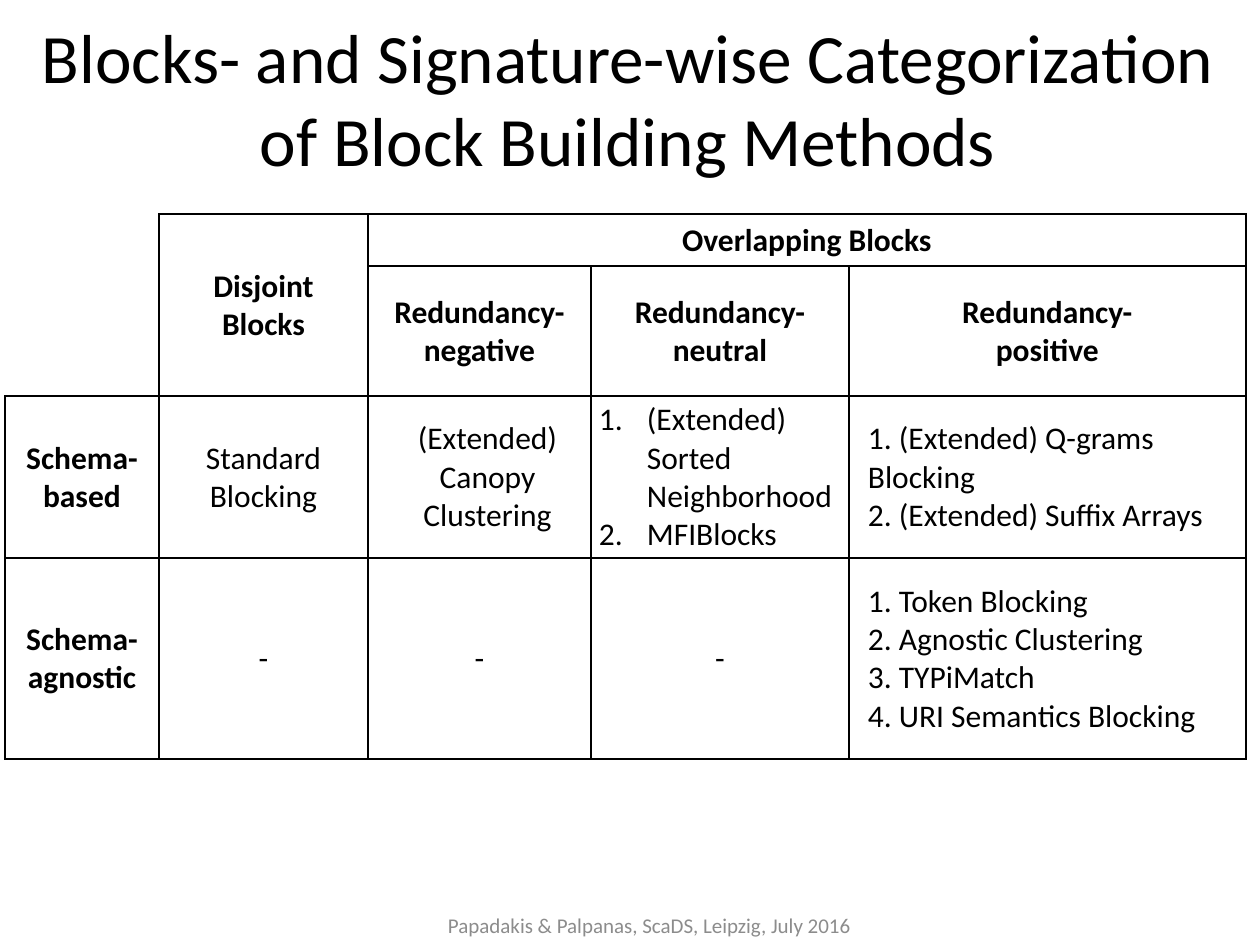
from lxml import etree
from pptx import Presentation
from pptx import util as u
from pptx.dml.color import RGBColor
from pptx.enum import text
from pptx.oxml.ns import qn

PX = 914400 // 126  # EMU per px
BLACK, GREY = "000000", "8C8C8C"
CENTER, LEFT = text.PP_ALIGN.CENTER, text.PP_ALIGN.LEFT


def write(tf, lines, size=18, color=BLACK, bold=False, align=CENTER,
          margin=0, indent=0, numbered=False):
    """Fill a text frame, one paragraph per line; margin and indent in px."""
    tf.word_wrap = True
    for i, line in enumerate(lines):
        p = tf.paragraphs[0] if i == 0 else tf.add_paragraph()
        p.text = line
        p.alignment = align
        for r in p.runs:
            r.font.size, r.font.bold, r.font.name = u.Pt(size), bold, "Calibri"
            r.font.color.rgb = RGBColor.from_string(color)
        if margin:
            pPr = p._p.get_or_add_pPr()
            pPr.set("marL", str(margin * PX))
            pPr.set("indent", str(indent * PX))
            if numbered:
                etree.SubElement(pPr, qn("a:buFont"), typeface="+mj-lt")
                etree.SubElement(pPr, qn("a:buAutoNum"), type="arabicPeriod")


def set_borders(cell, sides):
    """Draw the given sides of a cell in black and clear the others."""
    tcPr = cell._tc.get_or_add_tcPr()
    for i, side in enumerate("LRTB"):
        ln = etree.Element(qn("a:ln" + side), w=str(u.Pt(1)))
        if side in sides:
            fill = etree.SubElement(ln, qn("a:solidFill"))
            etree.SubElement(fill, qn("a:srgbClr"), val=BLACK)
        else:
            etree.SubElement(ln, qn("a:noFill"))
        tcPr.insert(i, ln)


prs = Presentation()
prs.slide_width, prs.slide_height = u.Inches(10), u.Inches(7.5)
s = prs.slides.add_slide(prs.slide_layouts[5])

# Title
title = s.shapes.title
title.left, title.top, title.width, title.height = (
    v * PX for v in (20, 20, 1216, 155))
write(title.text_frame,
      ["Blocks- and Signature-wise Categorization of Block Building Methods"],
      size=39.6)
title.text_frame.auto_size = text.MSO_AUTO_SIZE.NONE
title.text_frame.vertical_anchor = text.MSO_ANCHOR.MIDDLE

# Footer
footer = s.shapes.add_textbox(*(v * PX for v in (431, 900, 437, 50)))
write(footer.text_frame, ["Papadakis & Palpanas, ScaDS, Leipzig, July 2016"],
      size=12, color=GREY)
footer.text_frame.vertical_anchor = text.MSO_ANCHOR.MIDDLE

# Table grid
widths = [154, 209, 223, 258, 397]
heights = [52, 52, 78, 162, 201]
frame = s.shapes.add_table(len(heights), len(widths), 5 * PX, 214 * PX,
                           sum(widths) * PX, sum(heights) * PX)
table = frame.table
table.first_row = table.horz_banding = False
for column, width in zip(table.columns, widths):
    column.width = width * PX
for row, height in zip(table.rows, heights):
    row.height = height * PX

# Cell look: the empty corner keeps only the lines towards the table
for r in range(len(heights)):
    for c in range(len(widths)):
        cell = table.cell(r, c)
        cell.fill.background()
        cell.vertical_anchor = text.MSO_ANCHOR.MIDDLE
        cell.margin_left = cell.margin_right = cell.margin_top = PX
        cell.margin_bottom = 0
        corner = c == 0 and r < 3
        set_borders(cell, ("RB" if r == 2 else "R") if corner else "LRTB")

# Merged header cells
table.cell(0, 1).merge(table.cell(2, 1))
table.cell(0, 2).merge(table.cell(0, 4))
for c in (2, 3, 4):
    table.cell(1, c).merge(table.cell(2, c))

# Cell text
head = dict(bold=True)
contents = [
    (0, 1, ["Disjoint", "Blocks"], head),
    (0, 2, ["Overlapping Blocks"], head),
    (1, 2, ["Redundancy-", "negative"], head),
    (1, 3, ["Redundancy-", "neutral"], head),
    (1, 4, ["Redundancy-", "positive"], head),
    (3, 0, ["Schema-", "based"], head),
    (3, 1, ["Standard", "Blocking"], {}),
    (3, 2, ["(Extended)", "Canopy", "Clustering"], dict(margin=48, indent=-32)),
    (3, 3, ["(Extended)\vSorted Neighborhood", "MFIBlocks"],
     dict(align=LEFT, margin=55, indent=-48, numbered=True)),
    (3, 4, [" (Extended) Q-grams Blocking", " (Extended) Suffix Arrays"],
     dict(align=LEFT, margin=18, numbered=True)),
    (4, 0, ["Schema-", "agnostic"], head),
    (4, 1, ["-"], {}),
    (4, 2, ["-"], {}),
    (4, 3, ["-"], {}),
    (4, 4, [" Token Blocking", " Agnostic Clustering", " TYPiMatch",
            " URI Semantics Blocking"],
     dict(align=LEFT, margin=32, indent=-14, numbered=True)),
]
for r, c, lines, style in contents:
    write(table.cell(r, c).text_frame, lines, **style)

prs.save("out.pptx")
